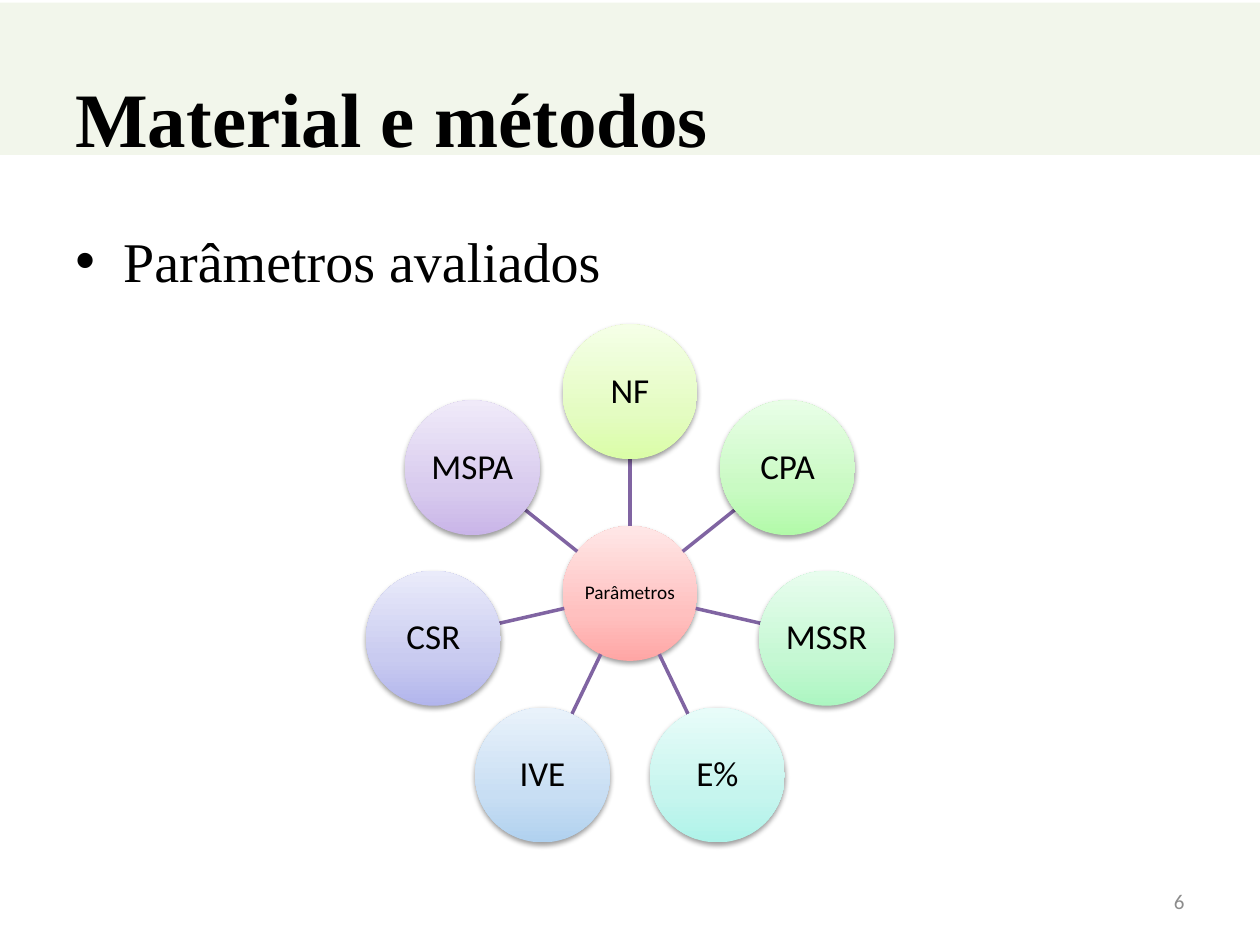
"""Build the slide of evaluated parameters as a radial diagram."""
import dataclasses
import math

import lxml.etree
import pptx
import pptx.dml.color
import pptx.enum.shapes
import pptx.enum.text
import pptx.oxml.ns
import pptx.util

Inches = pptx.util.Inches
qn = pptx.oxml.ns.qn
ALIGN = pptx.enum.text.PP_ALIGN
ANCHOR = pptx.enum.text.MSO_ANCHOR
SHAPE = pptx.enum.shapes.MSO_SHAPE


@dataclasses.dataclass(frozen=True)
class Theme:
    serif: str = "Times New Roman"
    sans: str = "Calibri"
    ink: str = "000000"
    muted: str = "8C8C8C"
    band: str = "D7E4BD"
    spoke: str = "8064A2"
    hub: tuple = ("FFA6A5", "FFC0BF", "FFE7E7")
    title_size: int = 44
    body_size: int = 32
    node_size: int = 20
    number_size: int = 12
    hub_size: int = 11


def rgb(color):
    return pptx.dml.color.RGBColor.from_string(color)


def add_xml(parent, tag, **attributes):
    child = lxml.etree.SubElement(parent, qn(tag))
    for name, value in attributes.items():
        child.set(name, str(value))
    return child


class SlideBuilder:
    def __init__(self, slide, theme):
        self.slide = slide
        self.theme = theme

    def fill_text(self, frame, text, size, font, color=None, align=ALIGN.LEFT,
                  anchor=ANCHOR.MIDDLE, bold=False):
        frame.text = text
        frame.vertical_anchor = anchor
        paragraph = frame.paragraphs[0]
        paragraph.alignment = align
        style = paragraph.runs[0].font
        style.size = pptx.util.Pt(size)
        style.name = font
        style.bold = bold
        style.color.rgb = rgb(color or self.theme.ink)
        return paragraph

    def text(self, left, top, width, height, text, size, font, **options):
        box = self.slide.shapes.add_textbox(
            Inches(left), Inches(top), Inches(width), Inches(height))
        box.text_frame.word_wrap = True
        return self.fill_text(box.text_frame, text, size, font, **options)

    def bullet(self, left, top, width, height, text):
        paragraph = self.text(left, top, width, height, text, self.theme.body_size,
                              self.theme.serif, anchor=ANCHOR.TOP)
        properties = paragraph._p.get_or_add_pPr()
        properties.set("marL", str(Inches(0.38)))
        properties.set("indent", str(Inches(-0.38)))
        add_xml(properties, "a:buFont", typeface="Arial")
        add_xml(properties, "a:buChar", char="•")

    def band(self, top, height):
        band = self.slide.shapes.add_shape(
            SHAPE.RECTANGLE, 0, Inches(top), Inches(10), Inches(height))
        band.shadow.inherit = False
        band.line.fill.background()
        band.fill.solid()
        band.fill.fore_color.rgb = rgb(self.theme.band)
        color = band._element.spPr.find(qn("a:solidFill"))[0]
        add_xml(color, "a:alpha", val=30000)

    def circle(self, x, y, diameter, text, size, shades):
        circle = self.slide.shapes.add_shape(
            SHAPE.OVAL, Inches(x - diameter / 2), Inches(y - diameter / 2),
            Inches(diameter), Inches(diameter))
        circle.line.fill.background()
        circle.fill.gradient()
        circle.fill.gradient_angle = 90
        properties = circle._element.spPr
        stops = properties.find(qn("a:gradFill")).find(qn("a:gsLst"))
        for stop in list(stops):
            stops.remove(stop)
        for position, shade in zip((0, 35000, 100000), shades):
            add_xml(add_xml(stops, "a:gs", pos=position), "a:srgbClr", val=shade)
        circle.shadow.inherit = False
        shadow = add_xml(properties.find(qn("a:effectLst")), "a:outerShdw",
                         blurRad=pptx.util.Pt(3.1), dist=pptx.util.Pt(1.6),
                         dir=5400000, rotWithShape=0)
        add_xml(add_xml(shadow, "a:srgbClr", val="000000"), "a:alpha", val=38000)
        frame = circle.text_frame
        frame.margin_left = frame.margin_right = Inches(0.01)
        frame.margin_top = frame.margin_bottom = Inches(0.01)
        frame.word_wrap = False
        paragraph = self.fill_text(frame, text, size, self.theme.sans,
                                   align=ALIGN.CENTER)
        paragraph.line_spacing = 0.9

    def spoke(self, start, end):
        spoke = self.slide.shapes.add_connector(
            pptx.enum.shapes.MSO_CONNECTOR.STRAIGHT,
            *(Inches(value) for value in (*start, *end)))
        spoke.line.color.rgb = rgb(self.theme.spoke)
        spoke.line.width = pptx.util.Pt(2)
        add_xml(spoke._element.spPr, "a:effectLst")

    def radial(self, x, y, orbit, diameter, hub, nodes):
        def point(angle, distance):
            return x + distance * math.sin(angle), y - distance * math.cos(angle)

        self.circle(x, y, diameter, hub, self.theme.hub_size, self.theme.hub)
        for index, (label, *shades) in enumerate(nodes):
            angle = 2 * math.pi * index / len(nodes)
            self.spoke(point(angle, diameter / 2), point(angle, orbit - diameter / 2))
            self.circle(*point(angle, orbit), diameter, label,
                        self.theme.node_size, shades)


def main():
    parameters = [
        ("NF", "DAFDA7", "E4FCC2", "F5FFE7"),
        ("CPA", "B2FAA9", "C9FAC3", "E9FEE7"),
        ("MSSR", "ACF6C1", "C5F8D3", "E8FDEE"),
        ("E%", "AEF3E9", "C6F5EE", "E8FCF9"),
        ("IVE", "B0D1EF", "C8DEF3", "E9F2FB"),
        ("CSR", "B2B5EC", "C9CBF0", "EAEBFA"),
        ("MSPA", "C9B5E8", "D8CBEE", "F0EAF9"),
    ]
    presentation = pptx.Presentation()
    presentation.slide_width = Inches(10)
    presentation.slide_height = Inches(7.5)
    theme = Theme()
    builder = SlideBuilder(
        presentation.slides.add_slide(presentation.slide_layouts[6]), theme)
    builder.band(0.02, 1.21)
    builder.text(0.5, 0.3, 9, 1.25, "Material e métodos", theme.title_size,
                 theme.serif, bold=True)
    builder.bullet(0.5, 1.75, 9, 4.95, "Parâmetros avaliados")
    builder.radial(5, 4.71, 1.6, 1.07, "Parâmetros", parameters)
    builder.text(7.17, 6.95, 2.33, 0.4, "6", theme.number_size, theme.sans,
                 color=theme.muted, align=ALIGN.RIGHT)
    presentation.save("out.pptx")


if __name__ == "__main__":
    main()
